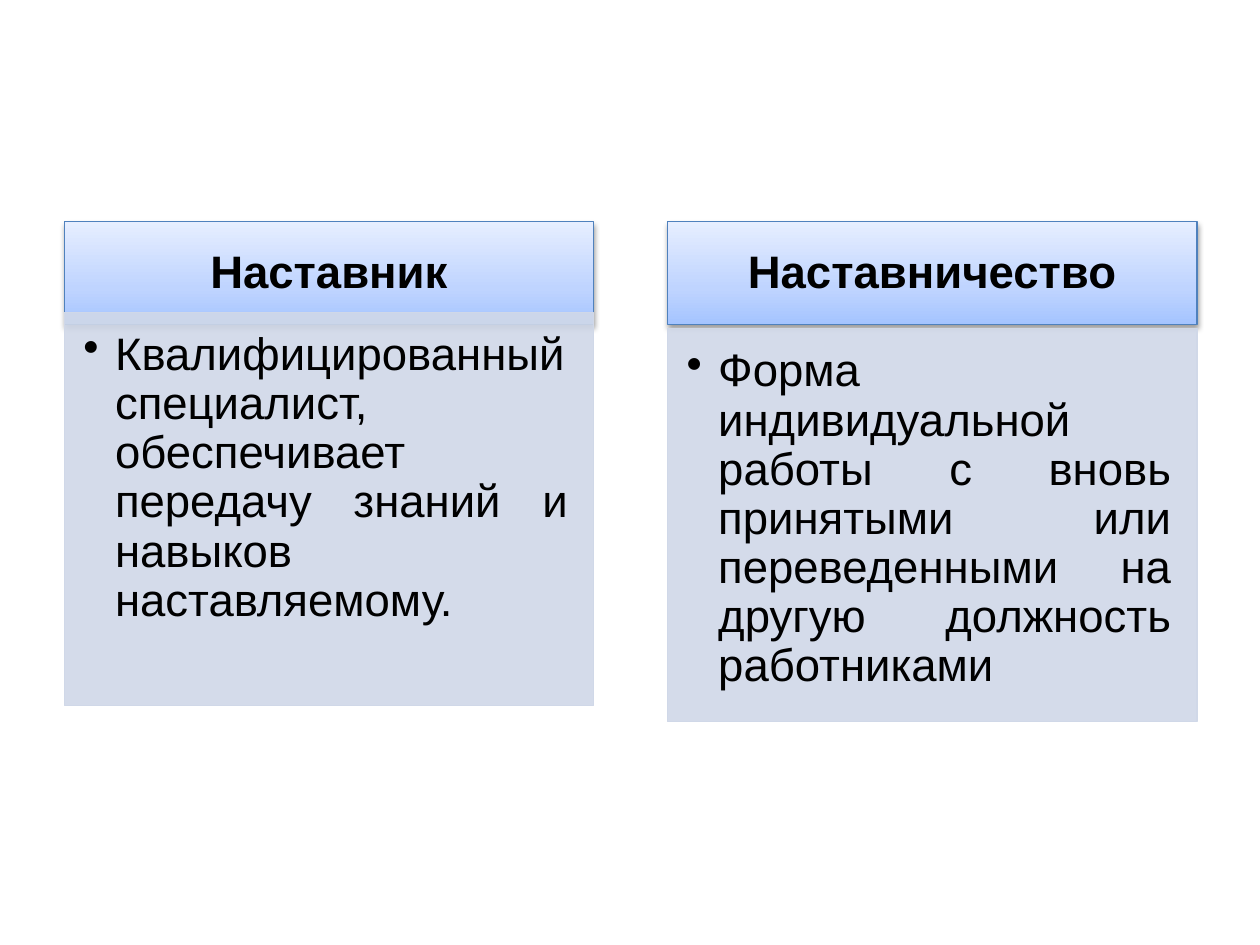
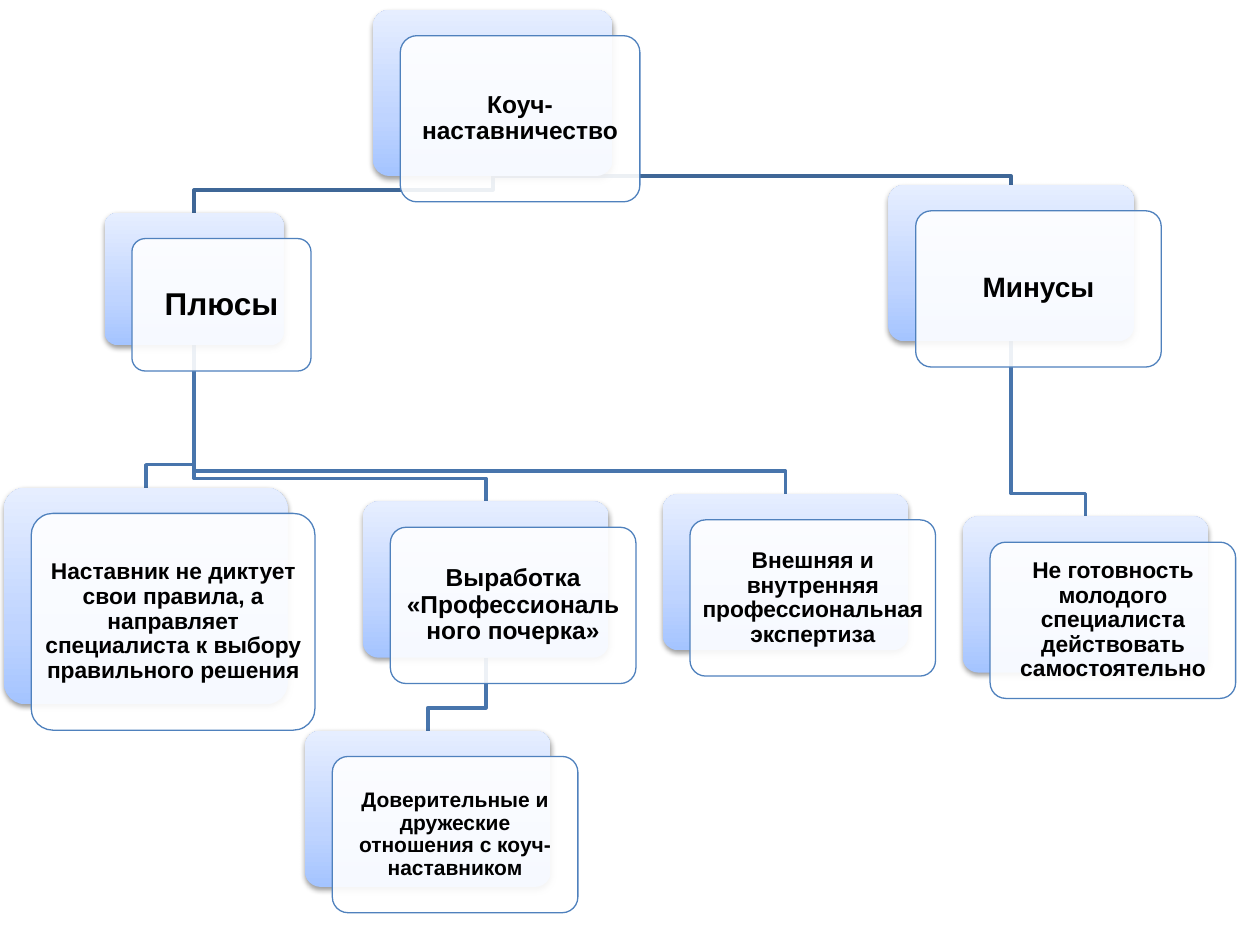
from collections import namedtuple
from dataclasses import dataclass

from lxml.etree import SubElement
from pptx import Presentation
from pptx.dml.color import RGBColor
from pptx.enum.shapes import MSO_SHAPE
from pptx.enum.text import MSO_ANCHOR, PP_ALIGN
from pptx.oxml import parse_xml
from pptx.oxml.ns import nsdecls, qn
from pptx.util import Cm, Pt


@dataclass(frozen=True)
class Theme:
    """Colours, type sizes and line widths of the slides."""
    font: str = "Arial"
    text: str = "000000"
    card: str = "FFFFFF"
    edge: str = "4F81BD"
    panel: str = "D0D8E8"
    links: tuple = ("3F6797", "4875AC")
    gradient: tuple = ((0, "A4C4FF"), (35, "BFD4FF"), (100, "E6EEFF"))
    column_size: int = 26
    edge_width: float = 0.75
    link_width: float = 2
    opacity: int = 90


T = Theme()
Node = namedtuple("Node", "text parent depth size x y w h", defaults=(4.95, 3.15))

COLUMNS = (
    ("Наставник", 1.3, 6.3,
     "Квалифицированный специалист, обеспечивает передачу знаний и навыков наставляемому."),
    ("Наставничество", 13.46, 6.63,
     "Форма индивидуальной работы с вновь принятыми или переведенными "
     "на другую должность работниками"),
)

NODES = {
    "coach": Node("Коуч-наставничество", None, 0, 14, 7.52, 0.2, 4.83, 3.35),
    "pluses": Node("Плюсы", "coach", 1, 18, 2.11, 4.29, 3.61, 2.67),
    "choice": Node("Наставник не диктует свои правила, а направляет специалиста "
                   "к выбору правильного решения", "pluses", 2, 13, 0.08, 9.83, 5.72, 4.37),
    "style": Node("Выработка «Профессионального почерка»", "pluses", 2, 14, 7.32, 10.11),
    "trust": Node("Доверительные и дружеские отношения с коуч-наставником",
                  "style", 3, 12, 6.15, 14.73),
    "expertise": Node("Внешняя и внутренняя профессиональная экспертиза",
                      "pluses", 2, 13, 13.36, 9.96),
    "minuses": Node("Минусы", "coach", 1, 16, 17.91, 3.73),
    "unready": Node("Не готовность молодого специалиста действовать самостоятельно",
                    "minuses", 2, 13, 19.41, 10.41),
}


def assign(obj, values):
    """Set each attribute named in values."""
    for name, value in values.items():
        setattr(obj, name, value)


def set_line(sp, color, width=T.edge_width):
    """Give a shape a solid outline."""
    sp.line.color.rgb = RGBColor.from_string(color)
    sp.line.width = Pt(width)


def add_box(s, kind, x, y, w, h, edge=None):
    """Add a preset shape without the default shadow and fill."""
    sp = s.shapes.add_shape(kind, Cm(x), Cm(y), Cm(w), Cm(h))
    sp.shadow.inherit = False
    sp.fill.background()
    if kind == MSO_SHAPE.ROUNDED_RECTANGLE:
        sp.adjustments[0] = 0.1
    if edge:
        set_line(sp, edge)
    else:
        sp.line.fill.background()
    return sp


def fill_translucent(sp, color):
    """Fill a shape with a slightly transparent colour."""
    sp.fill.solid()
    sp.fill.fore_color.rgb = RGBColor.from_string(color)
    clr = sp._element.spPr.find(f"{qn('a:solidFill')}/{qn('a:srgbClr')}")
    SubElement(clr, qn("a:alpha"), val=str(T.opacity * 1000))


def fill_raised(sp):
    """Give a shape the blue gradient and a soft shadow below."""
    spPr = sp._element.spPr
    stops = "".join(f'<a:gs pos="{pos * 1000}"><a:srgbClr val="{color}"/></a:gs>'
                    for pos, color in T.gradient)
    spPr.replace(spPr.find(qn("a:noFill")), parse_xml(
        f'<a:gradFill {nsdecls("a")} rotWithShape="1"><a:gsLst>{stops}</a:gsLst>'
        '<a:lin ang="16200000" scaled="0"/></a:gradFill>'))
    spPr.find(qn("a:effectLst")).append(parse_xml(
        f'<a:outerShdw {nsdecls("a")} blurRad="40000" dist="20000" dir="5400000" '
        'rotWithShape="0"><a:srgbClr val="000000"><a:alpha val="38000"/></a:srgbClr>'
        '</a:outerShdw>'))


def write(sp, text, size, insets, bold=True, bullet=False):
    """Write one paragraph: a centred label or a justified bullet."""
    tf = sp.text_frame
    sides = ("margin_left", "margin_top", "margin_right", "margin_bottom")
    assign(tf, dict(zip(sides, map(Cm, insets))))
    assign(tf, {"word_wrap": True,
                "vertical_anchor": MSO_ANCHOR.TOP if bullet else MSO_ANCHOR.MIDDLE})
    p = tf.paragraphs[0]
    assign(p, {"alignment": PP_ALIGN.JUSTIFY if bullet else PP_ALIGN.CENTER,
               "line_spacing": 0.9})
    if bullet:
        pPr = p._p.get_or_add_pPr()
        pPr.set("marL", str(Cm(0.64)))
        pPr.set("indent", str(-Cm(0.64)))
        SubElement(pPr, qn("a:buChar"), char="•")
    r = p.add_run()
    r.text = text
    assign(r.font, {"name": T.font, "size": Pt(size), "bold": bold})
    r.font.color.rgb = RGBColor.from_string(T.text)


def add_column(s, title, x, body_y, body):
    """Add a heading with a text panel under it."""
    sp = add_box(s, MSO_SHAPE.RECTANGLE, x, 4.47, 10.67, 2.08, T.edge)
    fill_raised(sp)
    write(sp, title, T.column_size, (0.51, 0.3, 0.51, 0.3))
    sp = add_box(s, MSO_SHAPE.RECTANGLE, x, body_y, 10.67, 7.92, T.panel)
    fill_translucent(sp, T.panel)
    write(sp, body, T.column_size, (0.38, 0.38, 0.51, 0.58), bold=False, bullet=True)


def add_link(s, parent, child):
    """Draw the bent line from a parent node to its child."""
    x1, y1 = parent.x + parent.w / 2, parent.y + parent.h
    x2, y2 = child.x + child.w / 2, child.y
    bend = max(y1, y2 - 0.46)
    fb = s.shapes.build_freeform(Cm(x1), Cm(y1))
    fb.add_line_segments([(Cm(x1), Cm(bend)), (Cm(x2), Cm(bend)), (Cm(x2), Cm(y2))],
                         close=False)
    sp = fb.convert_to_shape()
    sp.shadow.inherit = False
    sp.fill.background()
    set_line(sp, T.links[min(parent.depth, 1)], T.link_width)


def add_node(s, node):
    """Add a raised back card and a labelled front card."""
    kind = MSO_SHAPE.ROUNDED_RECTANGLE
    fill_raised(add_box(s, kind, node.x, node.y, node.w, node.h))
    sp = add_box(s, kind, node.x + 0.55, node.y + 0.52, node.w, node.h, T.edge)
    fill_translucent(sp, T.card)
    write(sp, node.text, node.size, [node.size * 0.01] * 4)


def main():
    """Build both slides and save them."""
    prs = Presentation()
    assign(prs, {"slide_width": Cm(25.4), "slide_height": Cm(19.05)})
    blank = prs.slide_layouts[6]

    s = prs.slides.add_slide(blank)
    for column in COLUMNS:
        add_column(s, *column)

    s = prs.slides.add_slide(blank)
    for node in NODES.values():
        if node.parent:
            add_link(s, NODES[node.parent], node)
    for node in NODES.values():
        add_node(s, node)

    prs.save("out.pptx")


if __name__ == "__main__":
    main()
